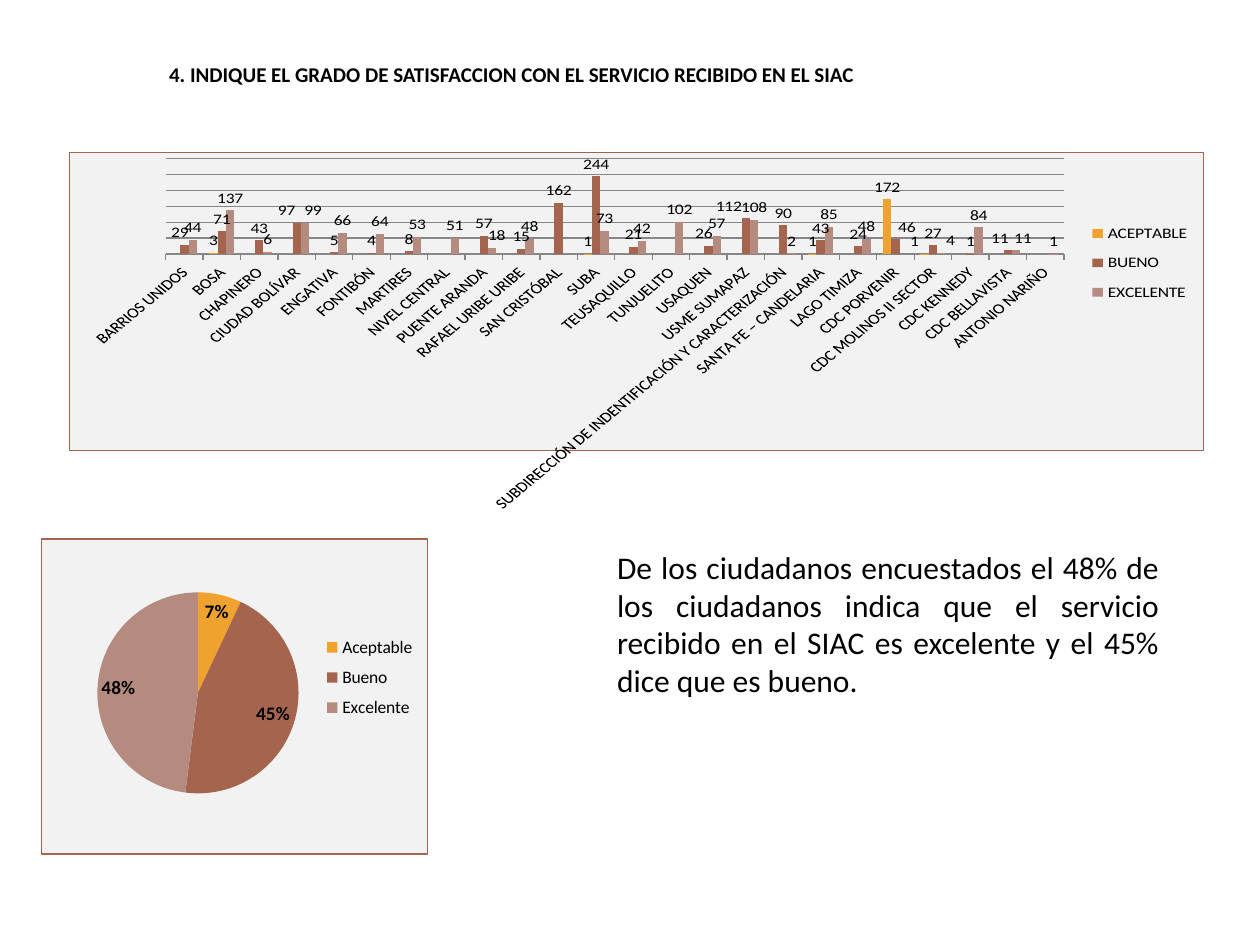
from lxml import etree
from pptx import Presentation
from pptx import util as u
from pptx.chart.data import CategoryChartData
from pptx.dml.color import RGBColor
from pptx.enum import chart as ch, text
from pptx.oxml import parse_xml
from pptx.oxml.ns import nsdecls, qn

TITLE = "4. INDIQUE EL GRADO DE SATISFACCION CON EL SERVICIO RECIBIDO EN EL SIAC"
BODY = ("De los ciudadanos encuestados el 48% de los ciudadanos indica que el "
        "servicio recibido en el SIAC es excelente y el 45% dice que es bueno.")
LEVELS = ("ACEPTABLE", "BUENO", "EXCELENTE")
SITES = [
    ("BARRIOS UNIDOS", None, 29, 44),
    ("BOSA", 3, 71, 137),
    ("CHAPINERO", None, 43, 6),
    ("CIUDAD BOLÍVAR", None, 97, 99),
    ("ENGATIVA", None, 5, 66),
    ("FONTIBÓN", None, 4, 64),
    ("MARTIRES", None, 8, 53),
    ("NIVEL CENTRAL", None, None, 51),
    ("PUENTE ARANDA", None, 57, 18),
    ("RAFAEL URIBE URIBE", None, 15, 48),
    ("SAN CRISTÓBAL", None, 162, None),
    ("SUBA", 1, 244, 73),
    ("TEUSAQUILLO", None, 21, 42),
    ("TUNJUELITO", None, None, 102),
    ("USAQUEN", None, 26, 57),
    ("USME SUMAPAZ", None, 112, 108),
    ("SUBDIRECCIÓN DE INDENTIFICACIÓN Y CARACTERIZACIÓN", None, 90, 2),
    ("SANTA FE – CANDELARIA", 1, 43, 85),
    ("LAGO TIMIZA", None, 24, 48),
    ("CDC PORVENIR", 172, 46, None),
    ("CDC MOLINOS II SECTOR", 1, 27, 4),
    ("CDC KENNEDY", None, 1, 84),
    ("CDC BELLAVISTA", None, 11, 11),
    ("ANTONIO NARIÑO", None, None, 1),
]
SHARES = {"Aceptable": 7, "Bueno": 45, "Excelente": 48}
# Percent of the chart's width or height
PLOT = {"x": 14.4, "y": 17, "w": 52.2, "h": 63.8}
BAR_KEY = {"x": 89.4, "y": 20, "w": 10, "h": 34}
PIE_KEY = {"x": 72, "y": 28, "w": 26, "h": 32}
# Sideways label moves per level, by site row
MOVES = (
    {20: -0.9},
    {0: -0.4, 3: -0.9, 14: -0.4, 15: -1.5, 19: 1, 22: -0.7},
    {3: 0.7, 8: 0.4, 20: 0.8, 22: 0.6},
)
THEME = {
    "font": "Calibri", "ink": "000000", "panel": "F2F2F2", "edge": "A5644E",
    "grid": "868686", "series": ("F0A22E", "A5644E", "B58B80"),
    "title": 12, "body": 18, "chart": 10, "share": 11,
}


def style(font, size, bold=False):
    font.name, font.size, font.bold = THEME["font"], u.Pt(size), bold
    font.color.rgb = RGBColor.from_string(THEME["ink"])


def paint(fill, color):
    fill.solid()
    fill.fore_color.rgb = RGBColor.from_string(color)


def box(slide, area, words, size, bold=False):
    frame = slide.shapes.add_textbox(*map(u.Cm, area)).text_frame
    frame.word_wrap = True
    para = frame.paragraphs[0]
    para.text = words
    style(para.font, size, bold)
    return frame


def place(node, spot, before=None, **modes):
    """Give a chart part a manual layout, after the child named before."""
    for old in node.findall(qn("c:layout")):
        node.remove(old)
    layout = etree.Element(qn("c:layout"))
    manual = etree.SubElement(layout, qn("c:manualLayout"))
    parts = {tag: round(value / 100, 4) for tag, value in spot.items()}
    for tag, value in {**modes, **parts}.items():
        etree.SubElement(manual, qn(f"c:{tag}")).set("val", str(value))
    if before:
        node.find(qn(before)).addnext(layout)
    else:
        node.insert(0, layout)


def chart(slide, kind, area, data, key):
    """Add a chart on a bordered panel, with its legend placed at key."""
    graph = slide.shapes.add_chart(kind, *map(u.Cm, area), data).chart
    style(graph.font, THEME["chart"])
    graph.has_title = False
    graph.has_legend = True
    graph.legend.position = ch.XL_LEGEND_POSITION.RIGHT
    graph.legend.include_in_layout = False
    root = graph.element.find(qn("c:chart"))
    place(root.find(qn("c:legend")), key, "c:legendPos",
          xMode="edge", yMode="edge")
    root.addnext(parse_xml(
        f'<c:spPr {nsdecls("c", "a")}>'
        f'<a:solidFill><a:srgbClr val="{THEME["panel"]}"/></a:solidFill>'
        f'<a:ln w="9525"><a:solidFill><a:srgbClr val="{THEME["edge"]}"/>'
        '</a:solidFill></a:ln></c:spPr>'))
    return graph


def bars(slide, area):
    data = CategoryChartData()
    names, *columns = zip(*SITES)
    data.categories = names
    for level, values in zip(LEVELS, columns):
        data.add_series(level, values)
    graph = chart(slide, ch.XL_CHART_TYPE.COLUMN_CLUSTERED, area, data, BAR_KEY)
    plot = graph.plots[0]
    plot.gap_width, plot.overlap, plot.vary_by_categories = 150, 0, False
    for series, color, moves in zip(plot.series, THEME["series"], MOVES):
        paint(series.format.fill, color)
        series.data_labels.show_value = True
        for row in moves:
            tag = series.points[row].data_label
            tag.position = ch.XL_LABEL_POSITION.OUTSIDE_END
    for node, moves in zip(graph.element.iter(qn("c:ser")), MOVES):
        for tag in node.iter(qn("c:dLbl")):
            row = int(tag.find(qn("c:idx")).get("val"))
            place(tag, {"x": moves[row], "y": 0}, "c:idx")
    grey = RGBColor.from_string(THEME["grid"])
    axis = graph.value_axis
    axis.visible = False
    axis.has_major_gridlines = True
    axis.major_gridlines.format.line.color.rgb = grey
    base = graph.category_axis
    base.format.line.color.rgb = grey
    base.major_tick_mark = ch.XL_TICK_MARK.OUTSIDE
    style(base.tick_labels.font, THEME["chart"])


def pie(slide, area):
    data = CategoryChartData()
    data.categories = list(SHARES)
    data.add_series("Series 1", list(SHARES.values()))
    graph = chart(slide, ch.XL_CHART_TYPE.PIE, area, data, PIE_KEY)
    series = graph.plots[0].series[0]
    for index, color in enumerate(THEME["series"]):
        paint(series.points[index].format.fill, color)
    tags = series.data_labels
    tags.show_percentage, tags.show_value = True, False
    tags.number_format, tags.number_format_is_linked = "0%", False
    tags.position = ch.XL_LABEL_POSITION.BEST_FIT
    style(tags.font, THEME["share"], True)
    zone = graph.element.find(qn("c:chart")).find(qn("c:plotArea"))
    place(zone, PLOT, layoutTarget="inner", xMode="edge", yMode="edge")


def main():
    deck = Presentation()
    deck.slide_width, deck.slide_height = u.Cm(25.4), u.Cm(19.05)
    slide = deck.slides.add_slide(deck.slide_layouts[6])
    head = box(slide, (3.05, 0.75, 20.6, 1.57), TITLE, THEME["title"], True)
    head.vertical_anchor = text.MSO_ANCHOR.MIDDLE
    head.margin_left = u.Cm(0.36)
    head.paragraphs[0].line_spacing = 0.9
    note = box(slide, (12.19, 10.92, 11.43, 3.33), BODY, THEME["body"])
    note.paragraphs[0].alignment = text.PP_ALIGN.JUSTIFY
    bars(slide, (1.39, 3.07, 22.88, 7.25))
    pie(slide, (0.83, 10.85, 7.8, 6.38))
    deck.save("out.pptx")


if __name__ == "__main__":
    main()
